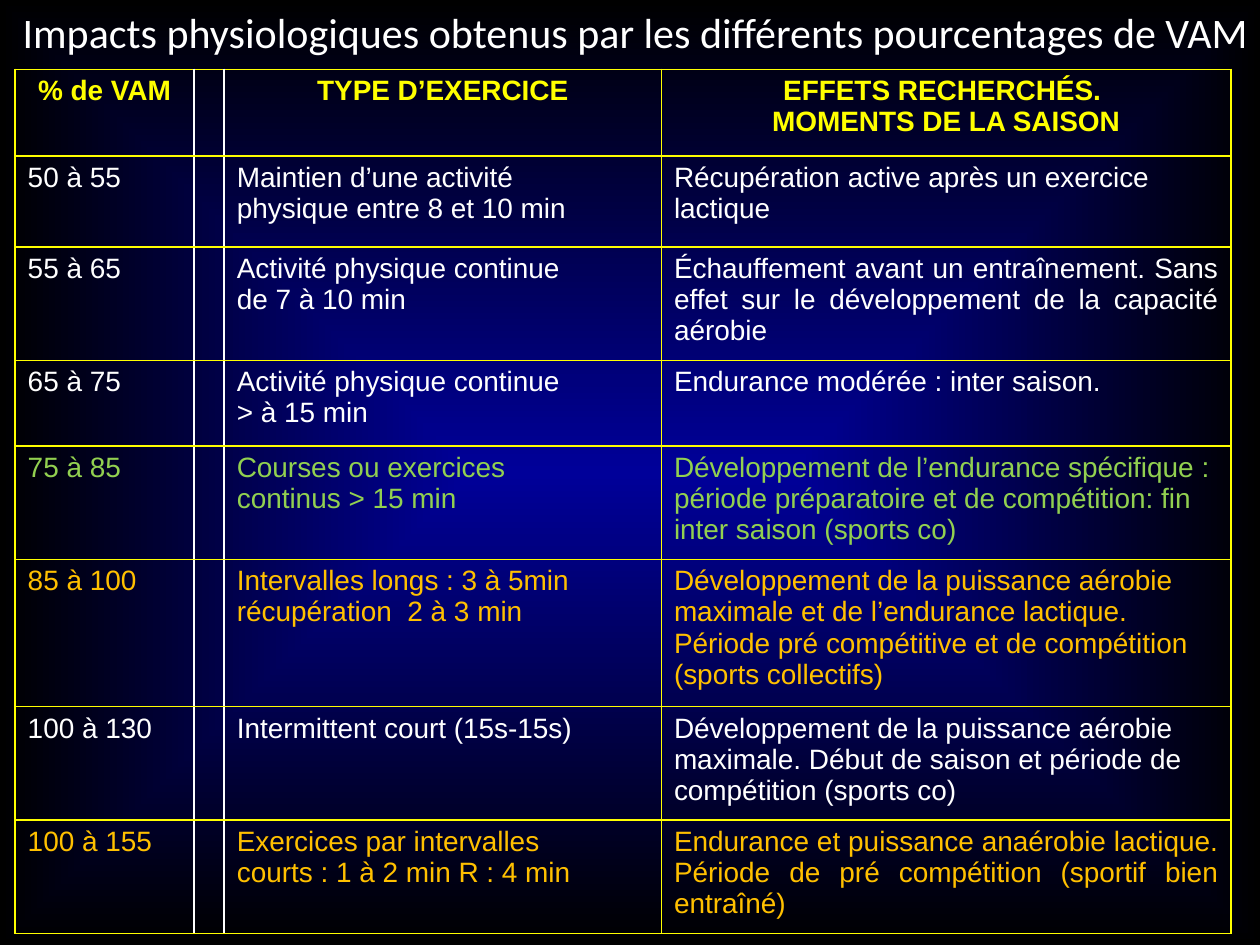
from lxml import etree
from pptx import Presentation
from pptx.dml.color import RGBColor
from pptx.enum import text
from pptx.oxml.ns import qn
from pptx.util import Inches, Pt

YELLOW, WHITE, GREEN, ORANGE = "FFFF00", "FFFFFF", "92D050", "FFC000"
LEFT, CENTER, JUSTIFY = text.PP_ALIGN.LEFT, text.PP_ALIGN.CENTER, text.PP_ALIGN.JUSTIFY

TITLE = "Impacts physiologiques obtenus par les différents pourcentages de VAM"
COLUMN_WIDTHS = [1.42, 0.24, 3.47, 4.52]
# height, colour, alignments of exercise and effect, percentage, exercise, effect
ROWS = [
    (0.69, YELLOW, CENTER, CENTER, "% de VAM", "TYPE D’EXERCICE",
     "EFFETS RECHERCHÉS. \nMOMENTS DE LA SAISON"),
    (0.72, WHITE, LEFT, LEFT, "50 à 55",
     "Maintien d’une activité\nphysique entre 8 et 10 min",
     "Récupération active après un exercice\nlactique"),
    (0.9, WHITE, JUSTIFY, JUSTIFY, "55 à 65",
     "Activité physique continue\nde 7 à 10 min",
     "Échauffement avant un entraînement. Sans effet sur le développement "
     "de la capacité aérobie "),
    (0.68, WHITE, JUSTIFY, JUSTIFY, "65 à 75",
     "Activité physique continue\n> à 15 min",
     "Endurance modérée : inter saison."),
    (0.9, GREEN, LEFT, LEFT, "75 à 85",
     "Courses ou exercices\ncontinus > 15 min",
     "Développement de l’endurance spécifique :\n"
     "période préparatoire et de compétition: fin inter saison (sports co)"),
    (1.17, ORANGE, LEFT, LEFT, "85 à 100",
     "Intervalles longs : 3 à 5min\nrécupération  2 à 3 min",
     "Développement de la puissance aérobie maximale et de l’endurance lactique. "
     "Période pré compétitive et de compétition (sports collectifs)"),
    (0.9, WHITE, LEFT, LEFT, "100 à 130", "Intermittent court (15s-15s)",
     "Développement de la puissance aérobie maximale. Début de saison et "
     "période de compétition (sports co)"),
    (0.9, ORANGE, JUSTIFY, JUSTIFY, "100 à 155",
     "Exercices par intervalles \ncourts : 1 à 2 min R : 4 min",
     "Endurance et puissance anaérobie lactique. Période de pré compétition "
     "(sportif bien entraîné) "),
]


def rgb(value):
    return RGBColor.from_string(value)


def set_font(paragraph, color, **formats):
    for name, value in formats.items():
        setattr(paragraph.font, name, value)
    paragraph.font.color.rgb = rgb(color)


def set_background(slide):
    """Radial gradient, blue in the centre and black at the edges."""
    fill = slide.background.fill
    fill.gradient()
    for stop, color, position in zip(fill.gradient_stops, ("000099", "000000"), (0, 1)):
        stop.color.rgb = rgb(color)
        stop.position = position
    gradient = slide.element.find(".//" + qn("a:gradFill"))
    linear = gradient.find(qn("a:lin"))
    shape_path = etree.Element(qn("a:path"), path="shape")
    etree.SubElement(shape_path, qn("a:fillToRect"),
                     {side: "50000" for side in "ltrb"})
    gradient.replace(linear, shape_path)


def set_borders(cell, colors):
    properties = cell._tc.get_or_add_tcPr()
    for index, (side, color) in enumerate(colors.items()):
        line = etree.Element(qn("a:ln" + side), w=str(Pt(1)))
        solid = etree.SubElement(line, qn("a:solidFill"))
        etree.SubElement(solid, qn("a:srgbClr"), val=color)
        properties.insert(index, line)


def add_title(slide):
    title = slide.shapes.title
    title.left, title.top, title.width, title.height = map(Inches, (0.08, 0, 10.03, 0.51))
    frame = title.text_frame
    frame.text = TITLE
    frame.word_wrap = False
    frame.auto_size = text.MSO_AUTO_SIZE.NONE
    frame.vertical_anchor = text.MSO_ANCHOR.TOP
    frame.paragraphs[0].alignment = LEFT
    set_font(frame.paragraphs[0], WHITE, name="Calibri", size=Pt(24))


def add_training_table(slide):
    table = slide.shapes.add_table(
        len(ROWS), len(COLUMN_WIDTHS), Inches(0.12), Inches(0.55),
        Inches(sum(COLUMN_WIDTHS)), Inches(sum(row[0] for row in ROWS))).table
    table.first_row = table.horz_banding = False
    for column, width in zip(table.columns, COLUMN_WIDTHS):
        column.width = Inches(width)
    for row_index, (height, color, exercise_align, effect_align, *texts) in enumerate(ROWS):
        table.rows[row_index].height = Inches(height)
        percentage, exercise, effect = texts
        first_align = CENTER if row_index == 0 else LEFT
        contents = [(percentage, first_align), ("", LEFT),
                    (exercise, exercise_align), (effect, effect_align)]
        for column_index, (content, alignment) in enumerate(contents):
            cell = table.cell(row_index, column_index)
            cell.text = content
            cell.fill.background()
            # The narrow spacer column has white sides
            set_borders(cell, {"L": WHITE if column_index in (1, 2) else YELLOW,
                               "R": WHITE if column_index in (0, 1) else YELLOW,
                               "T": YELLOW, "B": YELLOW})
            for paragraph in cell.text_frame.paragraphs:
                paragraph.alignment = alignment
                set_font(paragraph, color, name="Arial", size=Pt(16), bold=row_index == 0)


def main():
    presentation = Presentation()
    presentation.slide_width, presentation.slide_height = Inches(10), Inches(7.5)
    slide = presentation.slides.add_slide(presentation.slide_layouts[5])
    set_background(slide)
    add_training_table(slide)
    add_title(slide)
    presentation.save("out.pptx")


if __name__ == "__main__":
    main()
